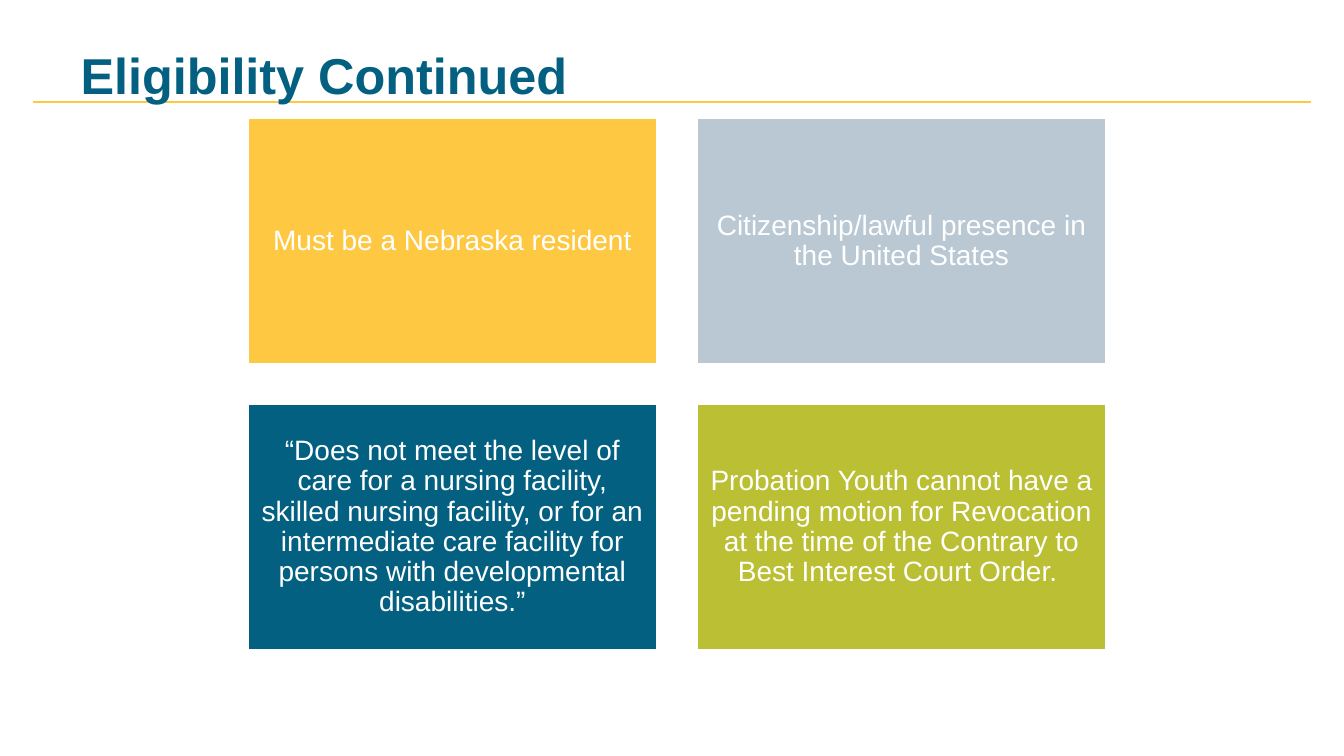
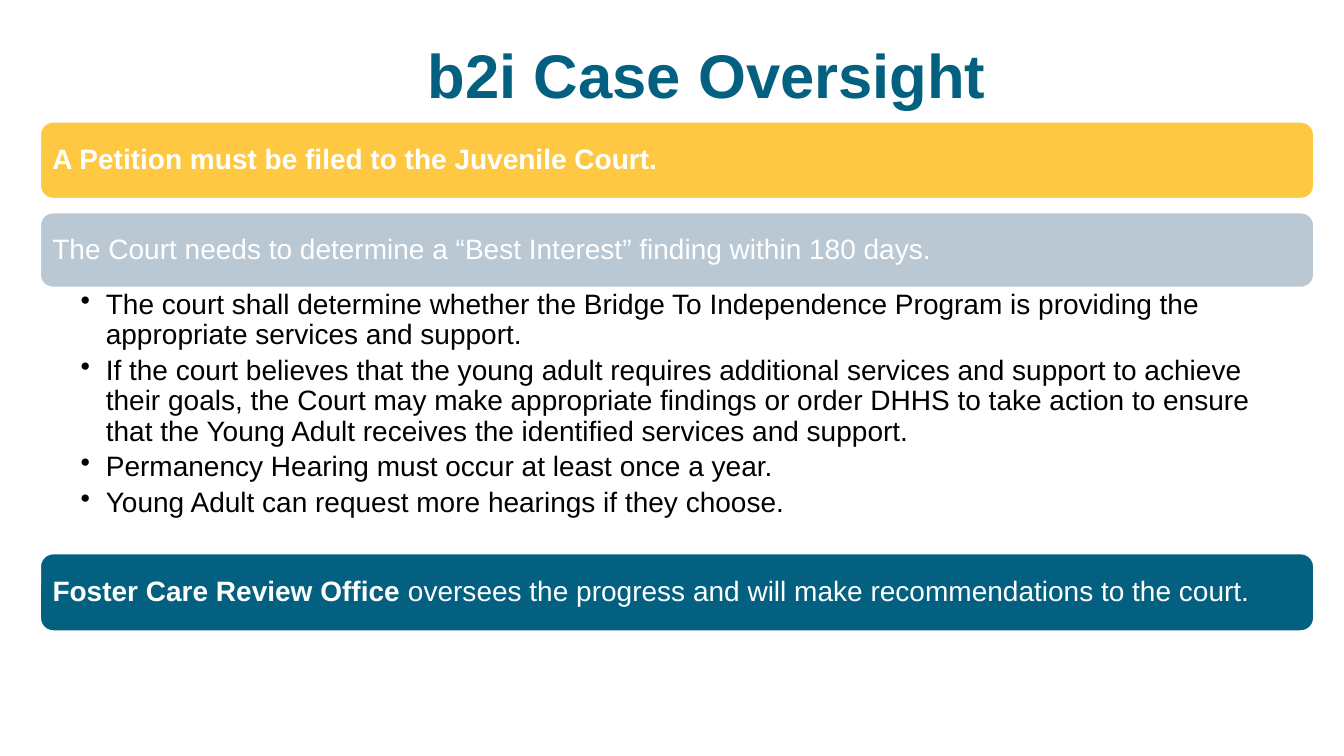
import lxml.etree
import pptx
import pptx.dml.color
import pptx.enum.shapes
import pptx.enum.text
import pptx.oxml.ns
import pptx.util

Pt = pptx.util.Pt
RGBColor = pptx.dml.color.RGBColor
SHAPE = pptx.enum.shapes.MSO_SHAPE
ALIGN = pptx.enum.text.PP_ALIGN
ANCHOR = pptx.enum.text.MSO_ANCHOR
qn = pptx.oxml.ns.qn

GOLD = RGBColor(0xFF, 0xC8, 0x43)
GREY = RGBColor(0xB9, 0xC8, 0xD3)
TEAL = RGBColor(0x03, 0x60, 0x80)
LIME = RGBColor(0xBA, 0xBF, 0x33)
WHITE = RGBColor(0xFF, 0xFF, 0xFF)
BLACK = RGBColor(0, 0, 0)


def write(shape, paragraphs, size=20, color=WHITE, align=ALIGN.LEFT, anchor=ANCHOR.MIDDLE,
          margins=(6, 6, 6, 6), space_after=0, bullet=None):
    frame = shape.text_frame
    frame.word_wrap = True
    frame.auto_size = pptx.enum.text.MSO_AUTO_SIZE.NONE
    frame.vertical_anchor = anchor
    frame.margin_left, frame.margin_top, frame.margin_right, frame.margin_bottom = map(Pt, margins)
    for index, runs in enumerate(paragraphs):
        paragraph = frame.add_paragraph() if index else frame.paragraphs[0]
        if bullet:
            properties = paragraph._p.get_or_add_pPr()
            properties.set("marL", str(Pt(18)))
            properties.set("indent", str(-Pt(18)))
            lxml.etree.SubElement(properties, qn("a:buChar")).set("char", bullet)
        paragraph.alignment = align
        paragraph.line_spacing = 0.9
        paragraph.space_after = Pt(space_after)
        for text, bold in runs:
            run = paragraph.add_run()
            run.text = text
            run.font.name = "Arial"
            run.font.size = Pt(size)
            run.font.bold = bold
            run.font.color.rgb = color


def add_panel(slide, kind, left, top, width, height, fill):
    shape = slide.shapes.add_shape(kind, Pt(left), Pt(top), Pt(width), Pt(height))
    shape.shadow.inherit = False
    shape.fill.solid()
    shape.fill.fore_color.rgb = fill
    shape.line.color.rgb = WHITE
    shape.line.width = Pt(1)
    return shape


presentation = pptx.Presentation()
presentation.slide_width = Pt(960)
presentation.slide_height = Pt(540)

slides = []
for title_text, title_size, title_align in [
    ("Eligibility Continued", 36, ALIGN.LEFT),
    ("b2i Case Oversight", 44, ALIGN.CENTER),
]:
    slide = presentation.slides.add_slide(presentation.slide_layouts[5])
    title = slide.shapes.title
    title.left, title.top, title.width, title.height = Pt(50.4), Pt(28.8), Pt(909.6), Pt(54.6)
    write(title, [[(title_text, True)]], size=title_size, color=TEAL, align=title_align,
          margins=(7.2, 3.6, 7.2, 3.6))
    slides.append(slide)
eligibility, oversight = slides

rule = eligibility.shapes.add_connector(
    pptx.enum.shapes.MSO_CONNECTOR.STRAIGHT, Pt(23.8), Pt(72.7), Pt(936.7), Pt(72.7))
rule.line.color.rgb = GOLD
rule.line.width = Pt(1.5)
lxml.etree.SubElement(rule._element.spPr, qn("a:effectLst"))
eligibility.shapes.title._element.addprevious(rule._element)

card_width, card_height, card_gap = 291.6, 175, 29.2
requirements = [
    ("Must be a Nebraska resident", GOLD),
    ("Citizenship/lawful presence in the United States", GREY),
    ("“Does not meet the level of care for a nursing facility, skilled nursing facility, or for an "
     "intermediate care facility for persons with developmental disabilities.”", TEAL),
    ("Probation Youth cannot have a pending motion for Revocation at the time of the Contrary to "
     "Best Interest Court Order. ", LIME),
]
for index, (text, fill) in enumerate(requirements):
    row, column = divmod(index, 2)
    card = add_panel(eligibility, SHAPE.RECTANGLE, 177.4 + column * (card_width + card_gap),
                     84.8 + row * (card_height + card_gap), card_width, card_height, fill)
    write(card, [[(text, False)]], align=ALIGN.CENTER, space_after=7)

band_left, band_width = 28.8, 909.6
bands = [
    (87.1, 54.7, GOLD, [("A Petition must be filed to the Juvenile Court.", True)]),
    (152, 53.3, GREY,
     [("The Court needs to determine a “Best Interest” finding within 180 days.", False)]),
    (395.5, 55.2, TEAL,
     [("Foster Care Review Office ", True),
      ("oversees the progress and will make recommendations to the court.", False)]),
]
for top, height, fill, runs in bands:
    band = add_panel(oversight, SHAPE.ROUNDED_RECTANGLE, band_left, top, band_width, height, fill)
    write(band, [runs], space_after=7)

court_duties = [
    "The court shall determine whether the Bridge To Independence Program is providing the "
    "appropriate services and support.",
    "If the court believes that the young adult requires additional services and support to achieve "
    "their goals, the Court may make appropriate findings or order DHHS to take action to ensure "
    "that the Young Adult receives the identified services and support.",
    "Permanency Hearing must occur at least once a year.",
    "Young Adult can request more hearings if they choose.",
]
duties_box = oversight.shapes.add_textbox(Pt(band_left), Pt(205.3), Pt(band_width), Pt(190))
write(duties_box, [[(text, False)] for text in court_duties], color=BLACK, anchor=ANCHOR.TOP,
      margins=(28.8, 2, 11.5, 2), space_after=4, bullet="•")

presentation.save("out.pptx")
